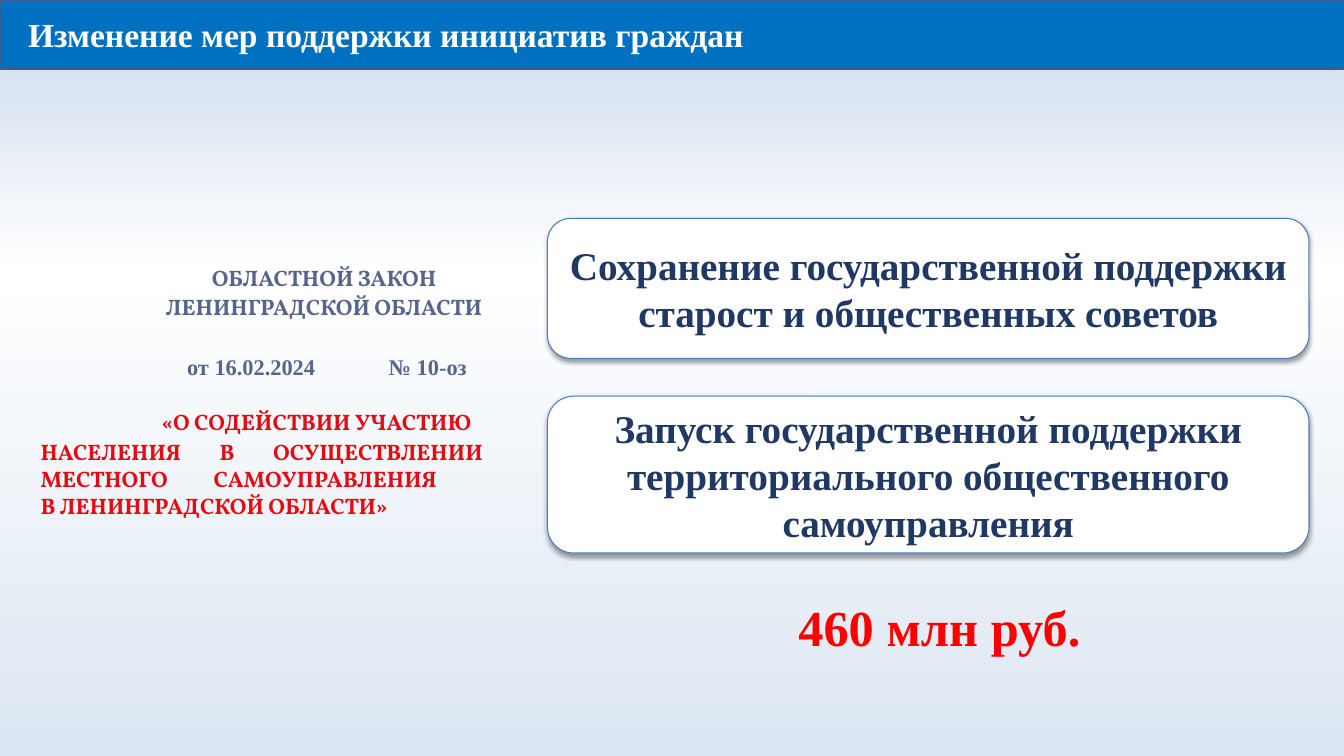
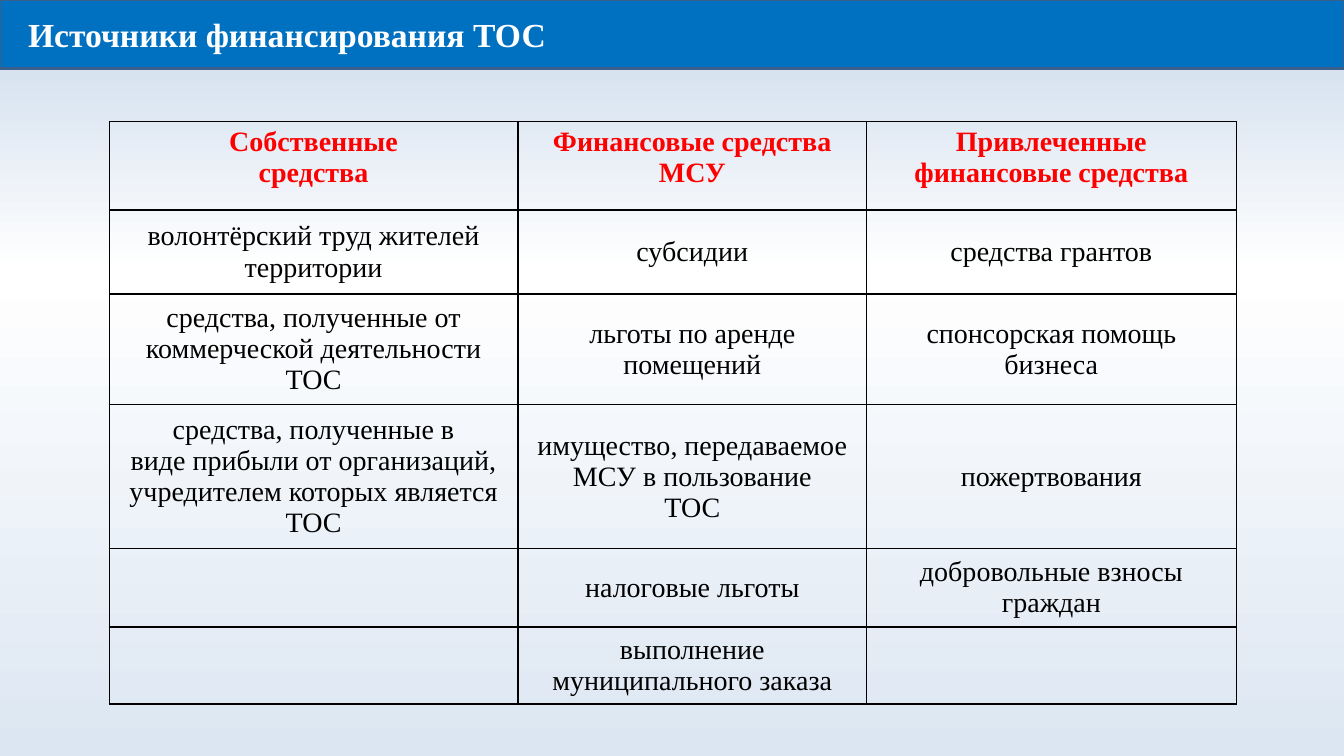
from lxml.etree import SubElement
from pptx import Presentation
from pptx.dml.color import RGBColor
from pptx.enum.shapes import MSO_SHAPE as Shape
from pptx.enum.text import MSO_ANCHOR as Anchor, MSO_AUTO_SIZE as AutoSize, PP_ALIGN as Align
from pptx.oxml.ns import qn
from pptx.util import Pt

WHITE = RGBColor(0xFF, 0xFF, 0xFF)
BLACK = RGBColor(0x00, 0x00, 0x00)
RED = RGBColor(0xFF, 0x00, 0x00)
LAW_RED = RGBColor(0xE3, 0x0C, 0x15)
LAW_GREY = RGBColor(0x56, 0x66, 0x8A)
NAVY = RGBColor(0x20, 0x38, 0x64)
BAND_BLUE = RGBColor(0x00, 0x70, 0xC0)
BAND_EDGE = RGBColor(0x3A, 0x5F, 0x8C)
CARD_EDGE = RGBColor(0x4B, 0x7E, 0xBC)
BACKGROUND_STOPS = (
    (0, RGBColor(0xCA, 0xD9, 0xEB)),
    (36, WHITE),
    (100, RGBColor(0xDC, 0xE6, 0xF2)),
)

SERIF = "Times New Roman"
LAW_FONT = "Vollkorn"
PAGE_WIDTH, PAGE_HEIGHT = 960, 540
BAND_HEIGHT = 49

COLUMN_WIDTHS = (292, 249, 264)
ROW_HEIGHTS = (63, 60, 79, 103, 56, 55)
FUNDING_ROWS = (
    ("Собственные\nсредства", "Финансовые средства\nМСУ", "Привлеченные\nфинансовые средства"),
    ("волонтёрский труд жителей территории", "субсидии", "средства грантов"),
    ("средства, полученные от\nкоммерческой деятельности ТОС", "льготы по аренде помещений",
     "спонсорская помощь\nбизнеса"),
    ("средства, полученные в\nвиде прибыли от организаций, учредителем которых является ТОС",
     "имущество, передаваемое МСУ в пользование\nТОС", "пожертвования"),
    ("", "налоговые льготы", "добровольные взносы\nграждан"),
    ("", "выполнение муниципального заказа", ""),
)


def add_color(parent, color, alpha=None):
    """Append an RGB colour element, optionally with an opacity in percent."""
    element = SubElement(parent, qn("a:srgbClr"), val=str(color))
    if alpha is not None:
        SubElement(element, qn("a:alpha"), val=str(alpha * 1000))


def set_background(master):
    """Give every slide the same vertical gradient."""
    fill = master.background.fill
    fill.gradient()
    fill.gradient_angle = 270
    stops = master.element.find(".//" + qn("a:gsLst"))
    for stop in list(stops):
        stops.remove(stop)
    for position, color in BACKGROUND_STOPS:
        add_color(SubElement(stops, qn("a:gs"), pos=str(position * 1000)), color)


def format_para(para, size, color, align=Align.CENTER, bold=True, font=SERIF):
    """Set the alignment and font of a paragraph."""
    para.alignment = align
    para.font.size = Pt(size)
    para.font.name = font
    para.font.bold = bold
    para.font.color.rgb = color


def place(shape, left, top, width, height):
    """Move a shape to a box given in points."""
    shape.left, shape.top = Pt(left), Pt(top)
    shape.width, shape.height = Pt(width), Pt(height)


def add_page(deck, title):
    """Add a slide with its title set in the blue band."""
    page = deck.slides.add_slide(deck.slide_layouts[5])
    band = page.shapes.title
    place(band, 0, 0, PAGE_WIDTH, BAND_HEIGHT)
    band.fill.solid()
    band.fill.fore_color.rgb = BAND_BLUE
    band.line.color.rgb = BAND_EDGE
    band.line.width = Pt(2)
    frame = band.text_frame
    frame.text = title
    frame.auto_size = AutoSize.NONE
    frame.vertical_anchor = Anchor.MIDDLE
    frame.margin_left = Pt(20)
    format_para(frame.paragraphs[0], 24, WHITE, Align.LEFT)
    return page


def add_label(page, text, left, top, width, height, line=None, tab=None, wrap=True, **style):
    """Add a borderless one-paragraph text without insets."""
    frame = page.shapes.add_textbox(Pt(left), Pt(top), Pt(width), Pt(height)).text_frame
    frame.word_wrap = wrap
    frame.margin_left = frame.margin_right = frame.margin_top = frame.margin_bottom = 0
    para = frame.paragraphs[0]
    para.text = text
    if line:
        para.line_spacing = Pt(line)
    if tab:
        tabs = SubElement(para._p.get_or_add_pPr(), qn("a:tabLst"))
        SubElement(tabs, qn("a:tab"), pos=str(Pt(tab)), algn="l")
    format_para(para, **style)


def add_law(page, left, top):
    """Add the heading, date and name of the law."""
    heading = {"size": 16, "color": LAW_GREY, "line": 20.9}
    name = {"size": 16, "color": LAW_RED, "align": Align.JUSTIFY, "font": LAW_FONT}
    add_label(page, "ОБЛАСТНОЙ ЗАКОН\nЛЕНИНГРАДСКОЙ ОБЛАСТИ",
              left + 80, top, 245, 57, font=LAW_FONT, **heading)
    add_label(page, "от 16.02.2024\t№ 10-оз", left + 101, top + 63.5, 207, 24, tab=144, **heading)
    add_label(page, "«О СОДЕЙСТВИИ УЧАСТИЮ", left + 86.5, top + 109, 239, 27, line=14.6, **name)
    add_label(page, "НАСЕЛЕНИЯ В ОСУЩЕСТВЛЕНИИ МЕСТНОГО САМОУПРАВЛЕНИЯ \nВ ЛЕНИНГРАДСКОЙ ОБЛАСТИ»",
              left, top + 126, 316, 58, **name)


def add_card(page, text, left, top, width, height):
    """Add a white rounded card with a soft shadow."""
    card = page.shapes.add_shape(Shape.ROUNDED_RECTANGLE, Pt(left), Pt(top), Pt(width), Pt(height))
    card.shadow.inherit = False
    card.fill.solid()
    card.fill.fore_color.rgb = WHITE
    card.line.color.rgb = CARD_EDGE
    card.line.width = Pt(0.75)
    effects = card._element.spPr.find(qn("a:effectLst"))
    shadow = SubElement(effects, qn("a:outerShdw"), blurRad=str(Pt(3.1)), dist=str(Pt(1.6)),
                        dir="5400000", rotWithShape="0")
    add_color(shadow, BLACK, 38)
    frame = card.text_frame
    frame.word_wrap = True
    frame.vertical_anchor = Anchor.MIDDLE
    frame.text = text
    format_para(frame.paragraphs[0], 28, NAVY)


def add_measures(page, left, top, width):
    """Add the two support cards and the total below them."""
    add_card(page, "Сохранение государственной поддержки старост и общественных советов",
             left, top, width, 100)
    add_card(page, "Запуск государственной поддержки территориального общественного самоуправления",
             left, top + 127, width, 112)
    add_label(page, "460 млн руб.", left + 178, top + 270, 204, 44, wrap=False, size=36, color=RED)


def draw_borders(cell):
    """Draw a thin black line on each side of a cell."""
    properties = cell._tc.get_or_add_tcPr()
    for side in ("lnL", "lnR", "lnT", "lnB"):
        border = SubElement(properties, qn("a:" + side), w=str(Pt(1)))
        add_color(SubElement(border, qn("a:solidFill")), BLACK)


def add_funding_table(page, left, top):
    """Add the table of funding sources."""
    frame = page.shapes.add_table(len(ROW_HEIGHTS), len(COLUMN_WIDTHS), Pt(left), Pt(top),
                                  Pt(sum(COLUMN_WIDTHS)), Pt(sum(ROW_HEIGHTS)))
    table = frame.table
    table.first_row = table.horz_banding = False
    for column, width in zip(table.columns, COLUMN_WIDTHS):
        column.width = Pt(width)
    for index, (row, height, texts) in enumerate(zip(table.rows, ROW_HEIGHTS, FUNDING_ROWS)):
        row.height = Pt(height)
        header = index == 0
        for cell, text in zip(row.cells, texts):
            draw_borders(cell)
            cell.fill.background()
            cell.vertical_anchor = Anchor.TOP if header else Anchor.MIDDLE
            cell.text_frame.text = text
            for para in cell.text_frame.paragraphs:
                format_para(para, 20, RED if header else BLACK, bold=header)


def main():
    """Build and save the deck."""
    deck = Presentation()
    deck.slide_width, deck.slide_height = Pt(PAGE_WIDTH), Pt(PAGE_HEIGHT)
    set_background(deck.slide_master)

    support = add_page(deck, "Изменение мер поддержки инициатив граждан")
    add_law(support, 29, 187)
    add_measures(support, 391, 156, 544)

    funding = add_page(deck, "Источники финансирования ТОС")
    add_funding_table(funding, 78, 87)

    deck.save("out.pptx")


if __name__ == "__main__":
    main()
